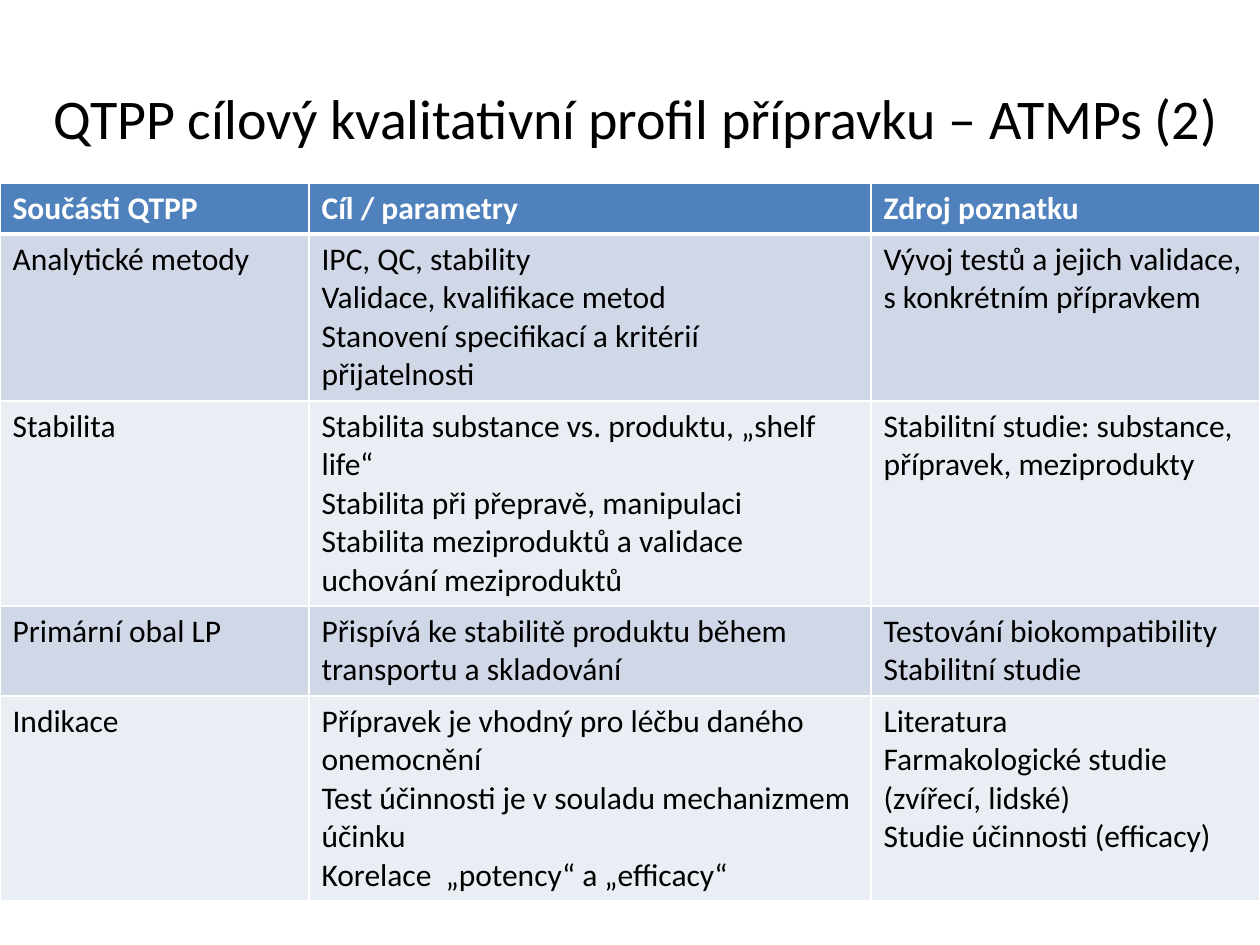
from dataclasses import dataclass

from lxml import etree
from pptx import Presentation
from pptx import util as u
from pptx.dml.color import RGBColor
from pptx.enum import text
from pptx.oxml import ns

EMU_PER_PX = u.Inches(1) / 126
FONT = "Calibri"
WHITE, BLACK = "FFFFFF", "000000"
HEADER_FILL, BANDS = "4F81BD", ("D0D8E8", "E9EDF4")
COLUMN_WIDTHS = (309, 562, 389)


@dataclass(frozen=True)
class Row:
    height: int
    cells: tuple[str, ...]


ROWS = (
    Row(51, ("Součásti QTPP", "Cíl / parametry", "Zdroj poznatku")),
    Row(167, (
        "Analytické metody",
        "IPC, QC, stability\nValidace, kvalifikace metod\n"
        "Stanovení specifikací a kritérií přijatelnosti",
        "Vývoj testů a jejich validace, s konkrétním přípravkem")),
    Row(204, (
        "Stabilita",
        "Stabilita substance vs. produktu, „shelf life“\n"
        "Stabilita při přepravě, manipulaci\n"
        "Stabilita meziproduktů a validace uchování meziproduktů",
        "Stabilitní studie: substance, přípravek, meziprodukty")),
    Row(90, (
        "Primární obal LP",
        "Přispívá ke stabilitě produktu během transportu a skladování",
        "Testování biokompatibility\nStabilitní studie")),
    Row(204, (
        "Indikace",
        "Přípravek je vhodný pro léčbu daného onemocnění\n"
        "Test účinnosti je v souladu mechanizmem účinku\n"
        "Korelace  „potency“ a „efficacy“",
        "Literatura\nFarmakologické studie (zvířecí, lidské)\n"
        "Studie účinnosti (efficacy)")),
)


def px(length: int) -> int:
    return round(length * EMU_PER_PX)


def color(value: str) -> RGBColor:
    return RGBColor.from_string(value)


def set_attributes(target, values: dict) -> None:
    for name, value in values.items():
        setattr(target, name, value)


def format_text(frame, size: int, ink: str, bold: bool = False) -> None:
    for para in frame.paragraphs:
        for span in para.runs:
            set_attributes(span.font, {"name": FONT, "size": u.Pt(size), "bold": bold})
            span.font.color.rgb = color(ink)


def add_borders(cell, widths: dict[str, int]) -> None:
    """Draw white borders; must run before the cell is filled."""
    properties = cell._tc.get_or_add_tcPr()
    for side, width in widths.items():
        line = etree.SubElement(properties, ns.qn(f"a:ln{side}"), w=str(u.Pt(width)))
        fill = etree.SubElement(line, ns.qn("a:solidFill"))
        etree.SubElement(fill, ns.qn("a:srgbClr"), val=WHITE)


def add_title(page) -> None:
    title = page.shapes.title
    set_attributes(title, {"left": 0, "top": px(38), "width": px(1260), "height": px(158)})
    frame = title.text_frame
    frame.text = " QTPP cílový kvalitativní profil přípravku – ATMPs (2)"
    set_attributes(frame, {"vertical_anchor": text.MSO_ANCHOR.MIDDLE, "word_wrap": True,
                           "auto_size": text.MSO_AUTO_SIZE.NONE})
    frame.paragraphs[0].alignment = text.PP_ALIGN.CENTER
    format_text(frame, 32, BLACK)


def add_profile_table(page) -> None:
    height = sum(row.height for row in ROWS)
    table = page.shapes.add_table(len(ROWS), len(COLUMN_WIDTHS), 0, px(183),
                                  px(sum(COLUMN_WIDTHS)), px(height)).table
    for column, width in zip(table.columns, COLUMN_WIDTHS):
        column.width = px(width)
    for index, row in enumerate(ROWS):
        table.rows[index].height = px(row.height)
        header = index == 0
        fill = HEADER_FILL if header else BANDS[(index - 1) % 2]
        top, bottom = 3 if index == 1 else 1, 3 if header else 1
        for cell, content in zip(table.rows[index].cells, row.cells):
            cell.text = content
            format_text(cell.text_frame, 18, WHITE if header else BLACK, header)
            add_borders(cell, {"L": 1, "R": 1, "T": top, "B": bottom})
            cell.fill.solid()
            cell.fill.fore_color.rgb = color(fill)


def main() -> None:
    deck = Presentation()
    set_attributes(deck, {"slide_width": px(1260), "slide_height": px(945)})
    page = deck.slides.add_slide(deck.slide_layouts[5])
    add_title(page)
    add_profile_table(page)
    deck.save("out.pptx")


if __name__ == "__main__":
    main()
